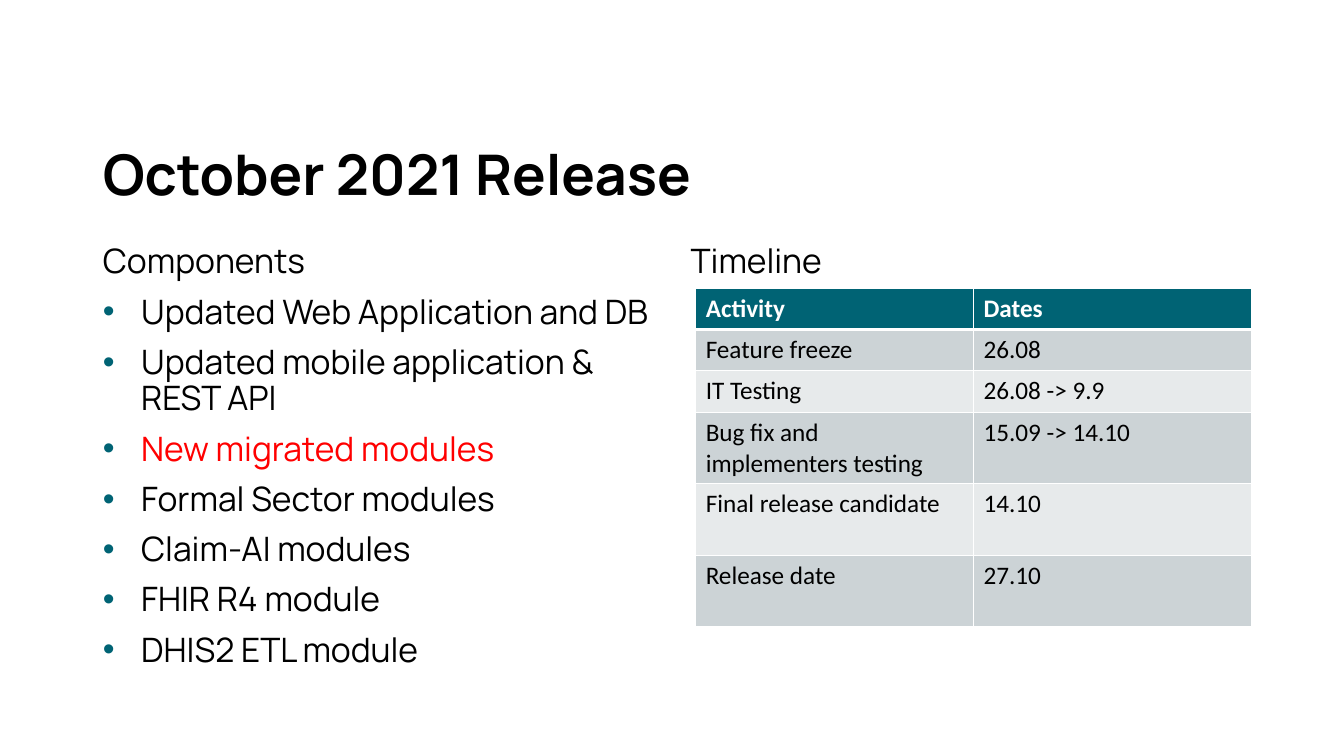
from dataclasses import dataclass

from lxml.etree import SubElement
from pptx import Presentation
from pptx.dml.color import RGBColor
from pptx.enum.text import MSO_ANCHOR, MSO_AUTO_SIZE, PP_ALIGN
from pptx.oxml.ns import qn
from pptx.util import Inches, Pt


@dataclass(frozen=True)
class Theme:
    text: str = "000000"
    white: str = "FFFFFF"
    accent: str = "006374"
    alert: str = "FF0000"
    bands: tuple[str, str] = ("CCD3D6", "E7EAEB")
    heading_font: str = "Manrope"
    table_font: str = "Calibri"
    title_size: int = 40
    body_size: int = 24
    table_size: int = 18


@dataclass(frozen=True)
class Item:
    text: str
    bullet: bool = True
    color: str = "000000"


@dataclass(frozen=True)
class Milestone:
    activity: str
    dates: str
    height: float = 0.41


THEME = Theme()
COMPONENTS = [
    Item("Components", bullet=False),
    Item("Updated Web Application and DB"),
    Item("Updated mobile application & REST API"),
    Item("New migrated modules", color=THEME.alert),
    Item("Formal Sector modules"),
    Item("Claim-AI modules"),
    Item("FHIR R4 module"),
    Item("DHIS2 ETL module"),
]
TIMELINE = [Item("Timeline", bullet=False)]
MILESTONES = [
    Milestone("Activity", "Dates"),
    Milestone("Feature freeze", "26.08"),
    Milestone("IT Testing", "26.08 -> 9.9"),
    Milestone("Bug fix and implementers testing", "15.09 -> 14.10", 0.71),
    Milestone("Final release candidate", "14.10", 0.71),
    Milestone("Release date", "27.10", 0.71),
]


def add_text(p, text: str, *, size: int, font: str = THEME.heading_font,
             color: str = THEME.text, bold: bool = False,
             spacing: float = 0.9, before: int = 0) -> None:
    p.alignment = PP_ALIGN.LEFT
    p.line_spacing = spacing
    p.space_before = Pt(before)
    r = p.add_run()
    r.text = text
    r.font.size = Pt(size)
    r.font.name = font
    r.font.bold = bold
    r.font.color.rgb = RGBColor.from_string(color)


def set_bullet(p, shown: bool) -> None:
    pPr = p._p.get_or_add_pPr()
    indent = Inches(0.38) if shown else 0
    pPr.set("marL", str(indent))
    pPr.set("indent", str(-indent))
    if shown:
        color = SubElement(pPr, qn("a:buClr"))
        SubElement(color, qn("a:srgbClr"), val=THEME.accent)
        SubElement(pPr, qn("a:buFont"), typeface="Arial")
        SubElement(pPr, qn("a:buChar"), char="•")
    else:
        SubElement(pPr, qn("a:buNone"))


def place(sp, left: float, top: float, width: float, height: float):
    sp.left, sp.top = Inches(left), Inches(top)
    sp.width, sp.height = Inches(width), Inches(height)
    tf = sp.text_frame
    tf.word_wrap = True
    tf.auto_size = MSO_AUTO_SIZE.NONE
    return tf


def fill_list(sp, left: float, items: list[Item]) -> None:
    tf = place(sp, left, 2.38, 5.67, 4.38)
    tf.vertical_anchor = MSO_ANCHOR.TOP
    for i, item in enumerate(items):
        p = tf.add_paragraph() if i else tf.paragraphs[0]
        set_bullet(p, item.bullet)
        add_text(p, item.text, size=THEME.body_size, color=item.color,
                 before=10 if i else 0)


def set_borders(cell, top: int, bottom: int) -> None:
    tcPr = cell._tc.get_or_add_tcPr()
    for side, width in (("L", 1), ("R", 1), ("T", top), ("B", bottom)):
        ln = SubElement(tcPr, qn(f"a:ln{side}"), w=str(Pt(width)))
        fill = SubElement(ln, qn("a:solidFill"))
        SubElement(fill, qn("a:srgbClr"), val=THEME.white)


def add_timeline(s, milestones: list[Milestone]) -> None:
    height = sum(m.height for m in milestones)
    table = s.shapes.add_table(len(milestones), 2, Inches(6.9), Inches(2.86),
                               Inches(5.51), Inches(height)).table
    table.horz_banding = False
    for i, m in enumerate(milestones):
        header = i == 0
        table.rows[i].height = Inches(m.height)
        fill = THEME.accent if header else THEME.bands[(i - 1) % 2]
        for cell, text in zip(table.rows[i].cells, (m.activity, m.dates)):
            set_borders(cell, top=3 if i == 1 else 1, bottom=3 if header else 1)
            cell.fill.solid()
            cell.fill.fore_color.rgb = RGBColor.from_string(fill)
            add_text(cell.text_frame.paragraphs[0], text,
                     size=THEME.table_size, font=THEME.table_font,
                     color=THEME.white if header else THEME.text,
                     bold=header, spacing=1.0)


def main() -> None:
    prs = Presentation()
    prs.slide_width, prs.slide_height = Inches(13.33), Inches(7.5)
    s = prs.slides.add_slide(prs.slide_layouts[3])

    # Title
    tf = place(s.shapes.title, 0.92, 1.24, 11.5, 1.03)
    tf.vertical_anchor = MSO_ANCHOR.MIDDLE
    add_text(tf.paragraphs[0], "October 2021 Release",
             size=THEME.title_size, bold=True)

    # Component list and timeline heading
    fill_list(s.placeholders[1], 0.92, COMPONENTS)
    fill_list(s.placeholders[2], 6.75, TIMELINE)

    # Timeline table
    add_timeline(s, MILESTONES)
    prs.save("out.pptx")


if __name__ == "__main__":
    main()
